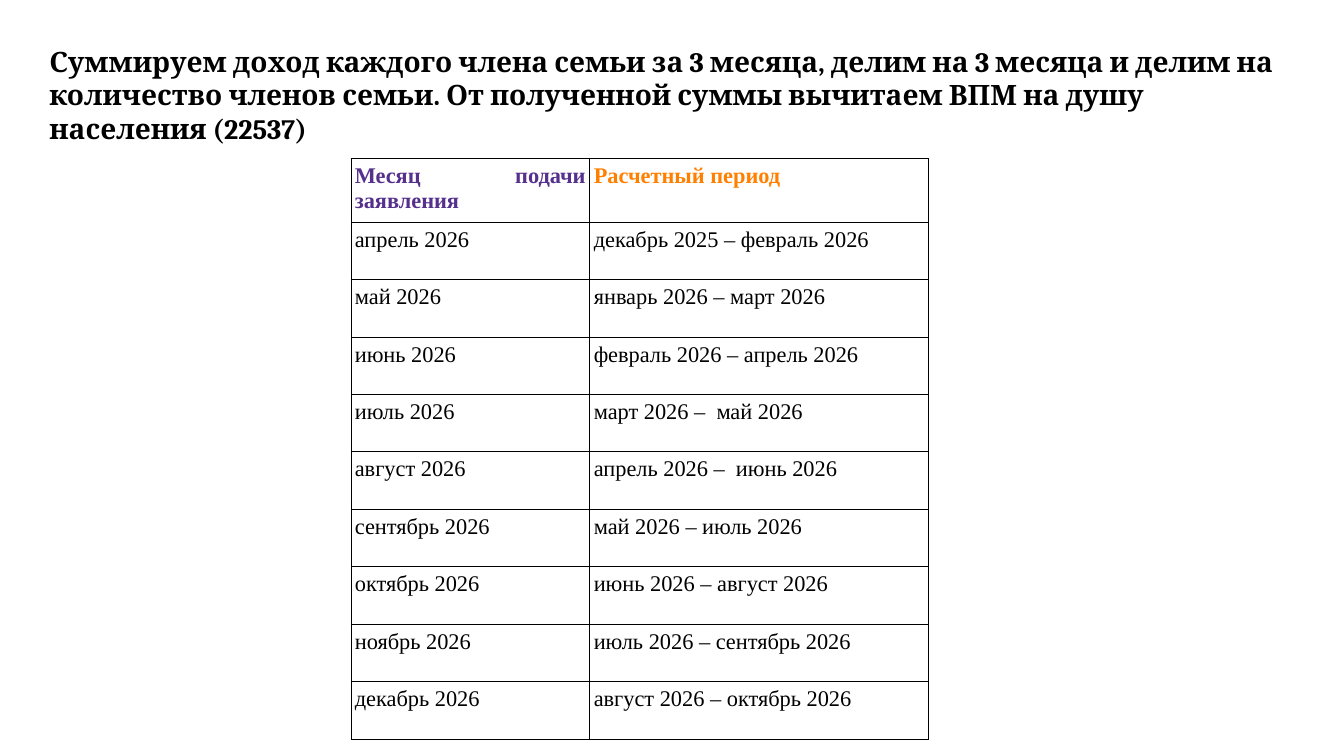
from dataclasses import dataclass

from lxml.etree import SubElement
from pptx import Presentation
from pptx.dml.color import RGBColor
from pptx.enum.text import MSO_ANCHOR, MSO_AUTO_SIZE, PP_ALIGN
from pptx.oxml.ns import qn
from pptx.util import Inches, Pt


@dataclass(frozen=True)
class Theme:
    black: str = "000000"
    violet: str = "55308D"
    orange: str = "FF8000"
    serif: str = "Cambria"
    roman: str = "Times New Roman"
    head: float = 20
    body: float = 16
    rule: float = 0.57


TITLE = (
    "Суммируем доход каждого члена семьи за 3 месяца, делим на 3 месяца "
    "и делим на количество членов семьи. От полученной суммы вычитаем ВПМ "
    "на душу населения (22537)"
)
ROWS = [
    ("Месяц подачи заявления", "Расчетный период"),
    ("апрель 2026", "декабрь 2025 – февраль 2026"),
    ("май 2026", "январь 2026 – март 2026"),
    ("июнь 2026", "февраль 2026 – апрель 2026"),
    ("июль 2026", "март 2026 –  май 2026"),
    ("август 2026", "апрель 2026 –  июнь 2026"),
    ("сентябрь 2026", "май 2026 – июль 2026"),
    ("октябрь 2026", "июнь 2026 – август 2026"),
    ("ноябрь 2026", "июль 2026 – сентябрь 2026"),
    ("декабрь 2026", "август 2026 – октябрь 2026"),
]


def assign(item, values):
    """Set every attribute of item that values names."""
    for name, value in values.items():
        setattr(item, name, value)


class Page:
    def __init__(self, slide, theme):
        self.slide = slide
        self.theme = theme

    def label(self, frame, text, align, color, **font):
        """Fill a text frame with one formatted paragraph."""
        frame.text = text
        line = frame.paragraphs[0]
        line.alignment = align
        run = line.runs[0]
        assign(run.font, font)
        run.font.color.rgb = RGBColor.from_string(color)

    def title(self, text, left, top, width, height):
        box = self.slide.shapes.title
        assign(box, {
            "left": Inches(left), "top": Inches(top),
            "width": Inches(width), "height": Inches(height),
        })
        assign(box.text_frame, {
            "word_wrap": True,
            "auto_size": MSO_AUTO_SIZE.SHAPE_TO_FIT_TEXT,
            "vertical_anchor": MSO_ANCHOR.TOP,
        })
        style = self.theme
        self.label(box.text_frame, text, PP_ALIGN.LEFT, style.black,
                   name=style.serif, size=Pt(style.head), bold=True)

    def border(self, cell):
        props = cell._tc.get_or_add_tcPr()
        for tag in ("a:lnL", "a:lnR", "a:lnT", "a:lnB"):
            line = SubElement(props, qn(tag), w=str(Pt(self.theme.rule)))
            fill = SubElement(line, qn("a:solidFill"))
            SubElement(fill, qn("a:srgbClr"), val=self.theme.black)

    def table(self, rows, left, top, widths, heights):
        style = self.theme
        grid = self.slide.shapes.add_table(
            len(rows), len(widths), Inches(left), Inches(top),
            Inches(sum(widths)), Inches(sum(heights))).table
        assign(grid, {"first_row": False, "horz_banding": False})
        for column, width in zip(grid.columns, widths):
            column.width = Inches(width)
        for row, height in zip(grid.rows, heights):
            row.height = Inches(height)
        heads = (style.violet, style.orange)
        for r, texts in enumerate(rows):
            for c, text in enumerate(texts):
                cell = grid.cell(r, c)
                assign(cell, {
                    "margin_left": Inches(0.04), "margin_right": Inches(0.04),
                    "margin_top": Inches(0.05), "margin_bottom": Inches(0.05),
                })
                self.border(cell)
                cell.fill.background()
                self.label(cell.text_frame, text, PP_ALIGN.JUSTIFY,
                           style.black if r else heads[c], name=style.roman,
                           size=Pt(style.body), bold=r == 0)


def main():
    deck = Presentation()
    assign(deck, {"slide_width": Inches(13.33), "slide_height": Inches(7.5)})
    page = Page(deck.slides.add_slide(deck.slide_layouts[5]), Theme())
    page.title(TITLE, 0.39, 0.39, 12.41, 0.79)
    page.table(ROWS, 3.48, 1.57, (2.37, 3.36),
               [0.63] + [0.57] * (len(ROWS) - 1))
    deck.save("out.pptx")


if __name__ == "__main__":
    main()
